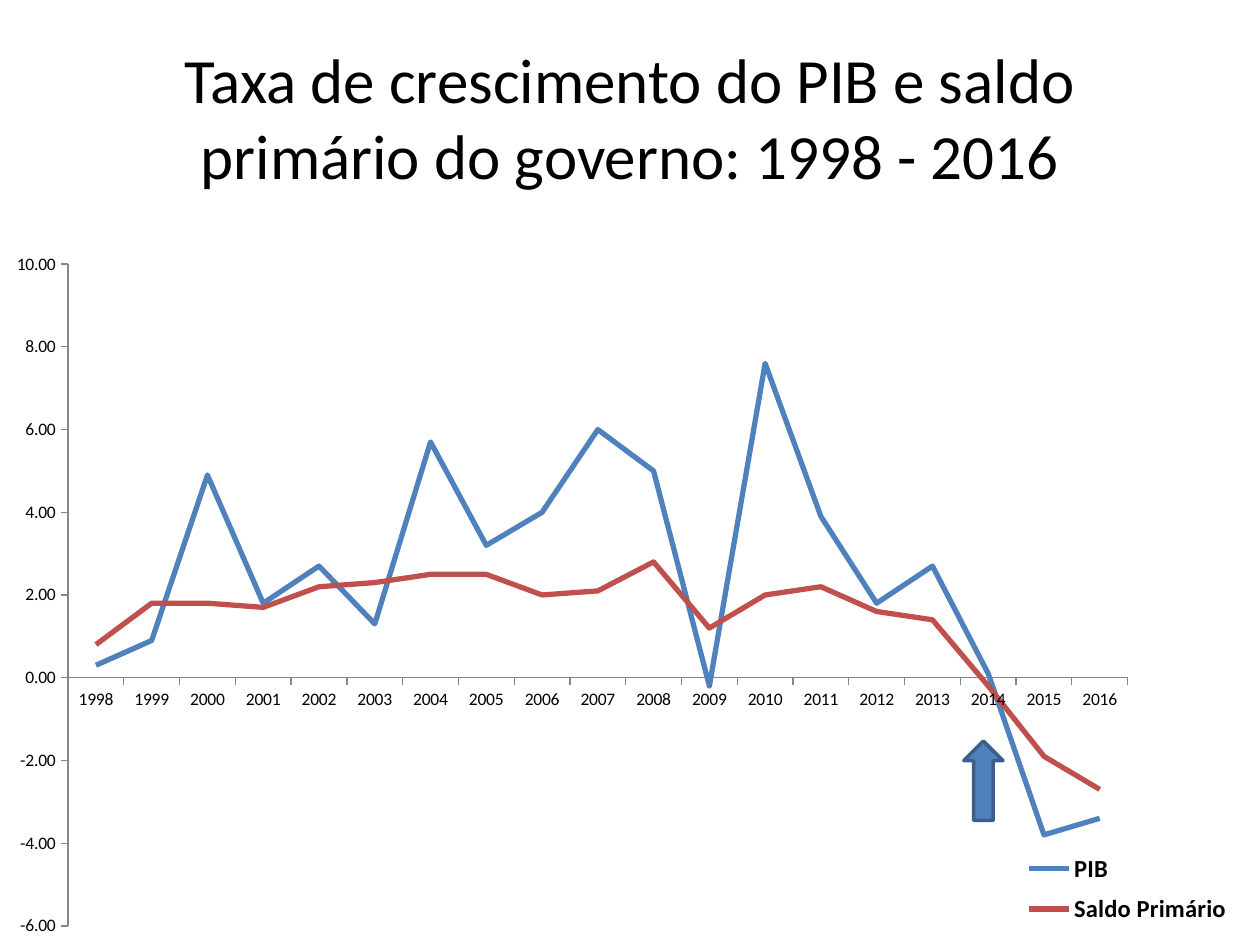
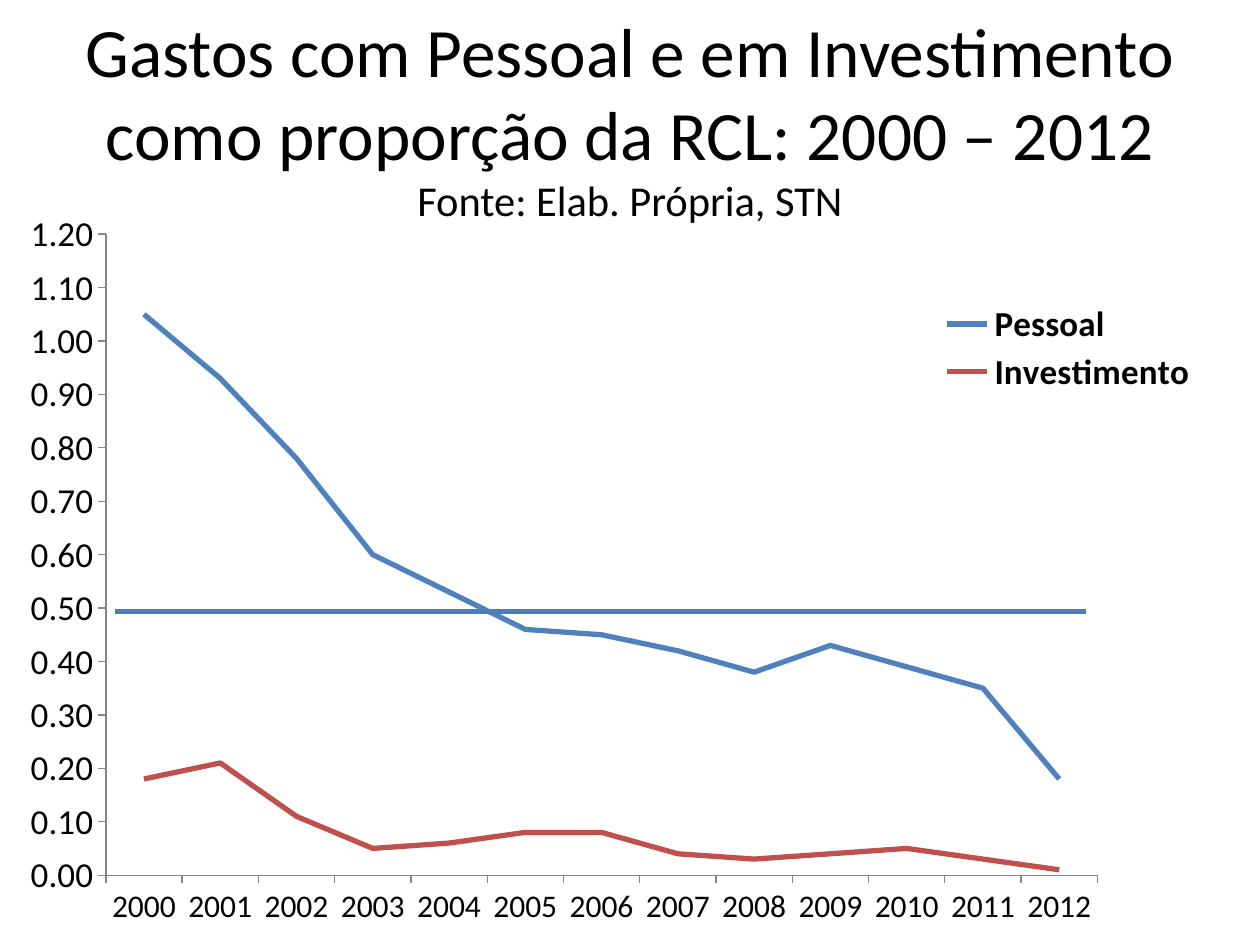
from dataclasses import dataclass

from lxml import etree
from pptx import Presentation
from pptx import util as u
from pptx.chart import data as cd
from pptx.dml.color import RGBColor
from pptx.enum import chart as ch, shapes, text
from pptx.oxml import ns


@dataclass(frozen=True)
class Theme:
    font: str = "Calibri"
    ink: RGBColor = RGBColor(0, 0, 0)
    blue: RGBColor = RGBColor(0x4F, 0x81, 0xBD)
    red: RGBColor = RGBColor(0xC0, 0x50, 0x4D)
    edge: RGBColor = RGBColor(0x3A, 0x5F, 0x8C)
    rule: RGBColor = RGBColor(0x4B, 0x7E, 0xBC)
    axis: RGBColor = RGBColor(0x86, 0x86, 0x86)
    head: float = 36
    big: float = 39.6
    note: float = 24.3
    stroke: float = 3


theme = Theme()


def style(font, size, bold=False):
    font.name, font.size, font.bold = theme.font, u.Pt(size), bold
    font.color.rgb = theme.ink


def place(part, box, inner=False):
    """Give a plot area or legend a fixed place, as shares of the chart."""
    for old in part.findall(ns.qn("c:layout")):
        part.remove(old)
    layout = etree.Element(ns.qn("c:layout"))
    manual = etree.SubElement(layout, ns.qn("c:manualLayout"))
    rows = [("layoutTarget", "inner")] if inner else []
    rows += [("xMode", "edge"), ("yMode", "edge")]
    rows += zip("xywh", box)
    for tag, val in rows:
        etree.SubElement(manual, ns.qn(f"c:{tag}")).set("val", str(val))
    mark = part.find(ns.qn("c:legendPos"))
    if mark is None:
        part.insert(0, layout)
    else:
        mark.addnext(layout)


# Content: title runs, chart frame, axes, legend and values
pages = [
    dict(
        title=[("Taxa de crescimento do PIB e saldo primário do governo: 1998 - 2016",
                theme.head)],
        top=4.93, years=range(1998, 2017),
        scale=(-6, 10, 2), sizes=(10, 10, 14),
        plot=(0.054, 0.028, 0.841, 0.945), key=(0.805, 0.855, 0.18, 0.13),
        rows={
            "PIB": [0.3, 0.9, 4.9, 1.8, 2.7, 1.3, 5.7, 3.2, 4, 6, 5, -0.2,
                    7.6, 3.9, 1.8, 2.7, 0.1, -3.8, -3.4],
            "Saldo Primário": [0.8, 1.8, 1.8, 1.7, 2.2, 2.3, 2.5, 2.5, 2, 2.1,
                               2.8, 1.2, 2, 2.2, 1.6, 1.4, -0.2, -1.9, -2.7],
        },
    ),
    dict(
        title=[("Gastos com Pessoal e em Investimento como proporção da RCL: 2000 – 2012",
                theme.big),
               ("Fonte: Elab. Própria, STN", theme.note)],
        top=4.11, years=range(2000, 2013),
        scale=(0, 1.2, 0.1), sizes=(18, 20, 20),
        plot=(0.084, 0.041, 0.787, 0.865), key=(0.738, 0.127, 0.22, 0.135),
        rows={
            "Pessoal": [1.05, 0.93, 0.78, 0.6, 0.53, 0.46, 0.45, 0.42, 0.38,
                        0.43, 0.39, 0.35, 0.18],
            "Investimento": [0.18, 0.21, 0.11, 0.05, 0.06, 0.08, 0.08, 0.04,
                             0.03, 0.04, 0.05, 0.03, 0.01],
        },
    ),
]

deck = Presentation()
deck.slide_width, deck.slide_height = u.Cm(25.4), u.Cm(19.05)
slides = []

for page in pages:
    slide = deck.slides.add_slide(deck.slide_layouts[6])
    slides.append(slide)

    # Title
    frame = slide.shapes.add_textbox(
        u.Cm(1.27), u.Cm(0.76), u.Cm(22.86), u.Cm(3.18)).text_frame
    frame.word_wrap = True
    frame.vertical_anchor = text.MSO_ANCHOR.MIDDLE
    para = frame.paragraphs[0]
    para.alignment = text.PP_ALIGN.CENTER
    for i, (words, size) in enumerate(page["title"]):
        if i:
            para.add_line_break()
        run = para.add_run()
        run.text = words
        style(run.font, size)

    # Line chart
    data = cd.CategoryChartData(number_format="0.00")
    data.categories = [str(year) for year in page["years"]]
    for name, vals in page["rows"].items():
        data.add_series(name, vals)
    chart = slide.shapes.add_chart(
        ch.XL_CHART_TYPE.LINE, 0, u.Cm(page["top"]), deck.slide_width,
        deck.slide_height - u.Cm(page["top"]), data).chart
    chart.has_title = False
    style(chart.font, 10)
    plot = chart.plots[0]
    plot.vary_by_categories = False
    for row, color in zip(plot.series, (theme.blue, theme.red)):
        row.smooth = False
        row.marker.style = ch.XL_MARKER_STYLE.NONE
        row.format.line.color.rgb = color
        row.format.line.width = u.Pt(theme.stroke)

    # Axes
    x_size, y_size, key_size = page["sizes"]
    for axis, size in ((chart.category_axis, x_size), (chart.value_axis, y_size)):
        axis.has_major_gridlines = False
        axis.major_tick_mark = ch.XL_TICK_MARK.OUTSIDE
        axis.minor_tick_mark = ch.XL_TICK_MARK.NONE
        axis.format.line.color.rgb = theme.axis
        axis.format.line.width = u.Pt(0.75)
        style(axis.tick_labels.font, size)
    axis = chart.value_axis
    axis.minimum_scale, axis.maximum_scale, axis.major_unit = page["scale"]
    axis.tick_labels.number_format = "0.00"
    axis.tick_labels.number_format_is_linked = False

    # Legend
    chart.has_legend = True
    legend = chart.legend
    legend.position = ch.XL_LEGEND_POSITION.RIGHT
    legend.include_in_layout = False
    style(legend.font, key_size, bold=True)
    area = chart.element.find(".//" + ns.qn("c:plotArea"))
    key = chart.element.find(".//" + ns.qn("c:legend"))
    place(area, page["plot"], inner=True)
    place(key, page["key"])

# Arrow pointing at 2014
arrow = slides[0].shapes.add_shape(
    shapes.MSO_SHAPE.UP_ARROW, u.Cm(19.43), u.Cm(14.94), u.Cm(0.79), u.Cm(1.6))
arrow.shadow.inherit = False
arrow.fill.solid()
arrow.fill.fore_color.rgb = theme.blue
arrow.line.color.rgb = theme.edge
arrow.line.width = u.Pt(2)

# Reference line near half of revenue
level = u.Cm(12.32)
limit = slides[1].shapes.add_connector(
    shapes.MSO_CONNECTOR.STRAIGHT, u.Cm(2.31), level, u.Cm(21.89), level)
limit.line.color.rgb = theme.rule
limit.line.width = u.Pt(theme.stroke)
etree.SubElement(limit.element.spPr, ns.qn("a:effectLst"))

deck.save("out.pptx")
